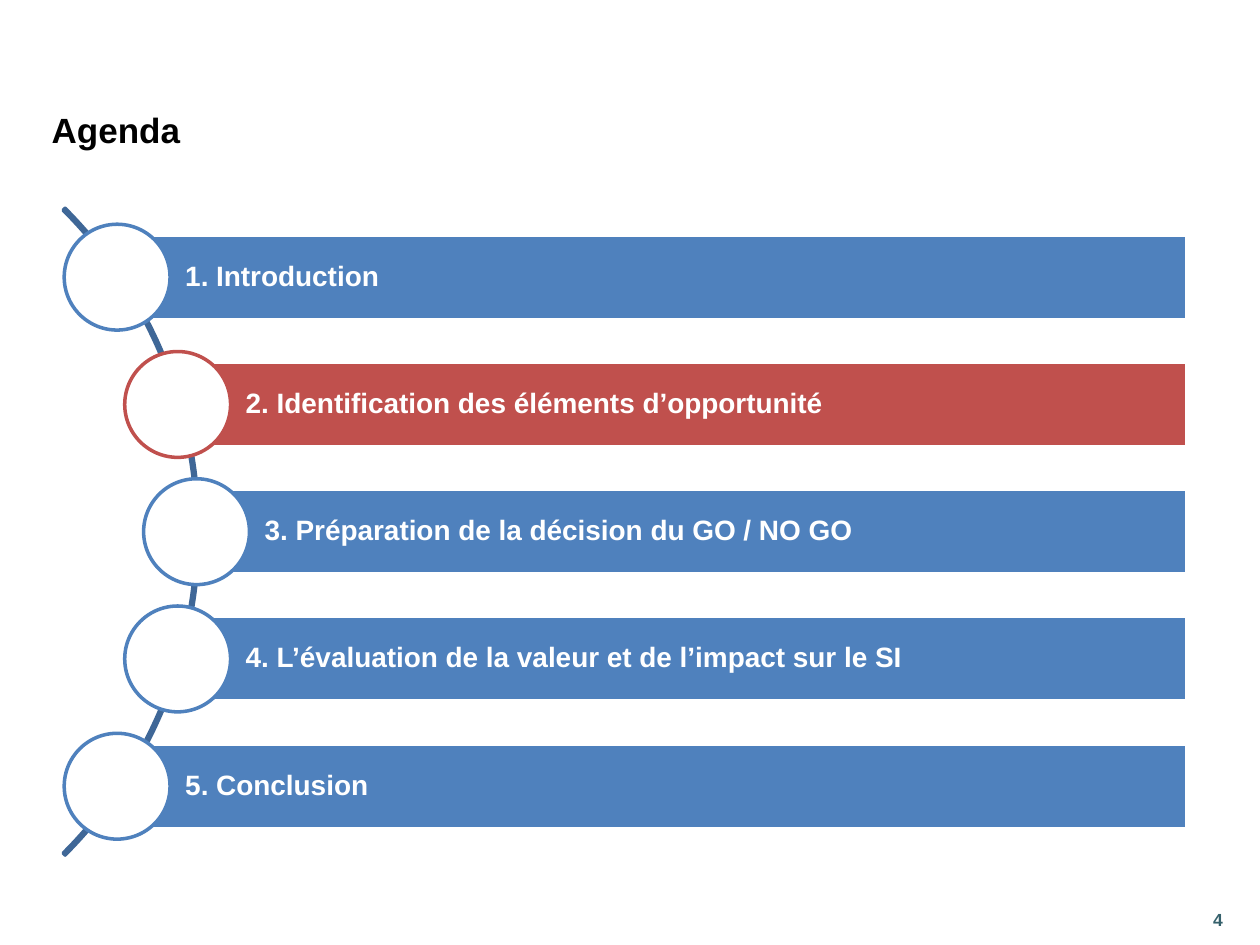
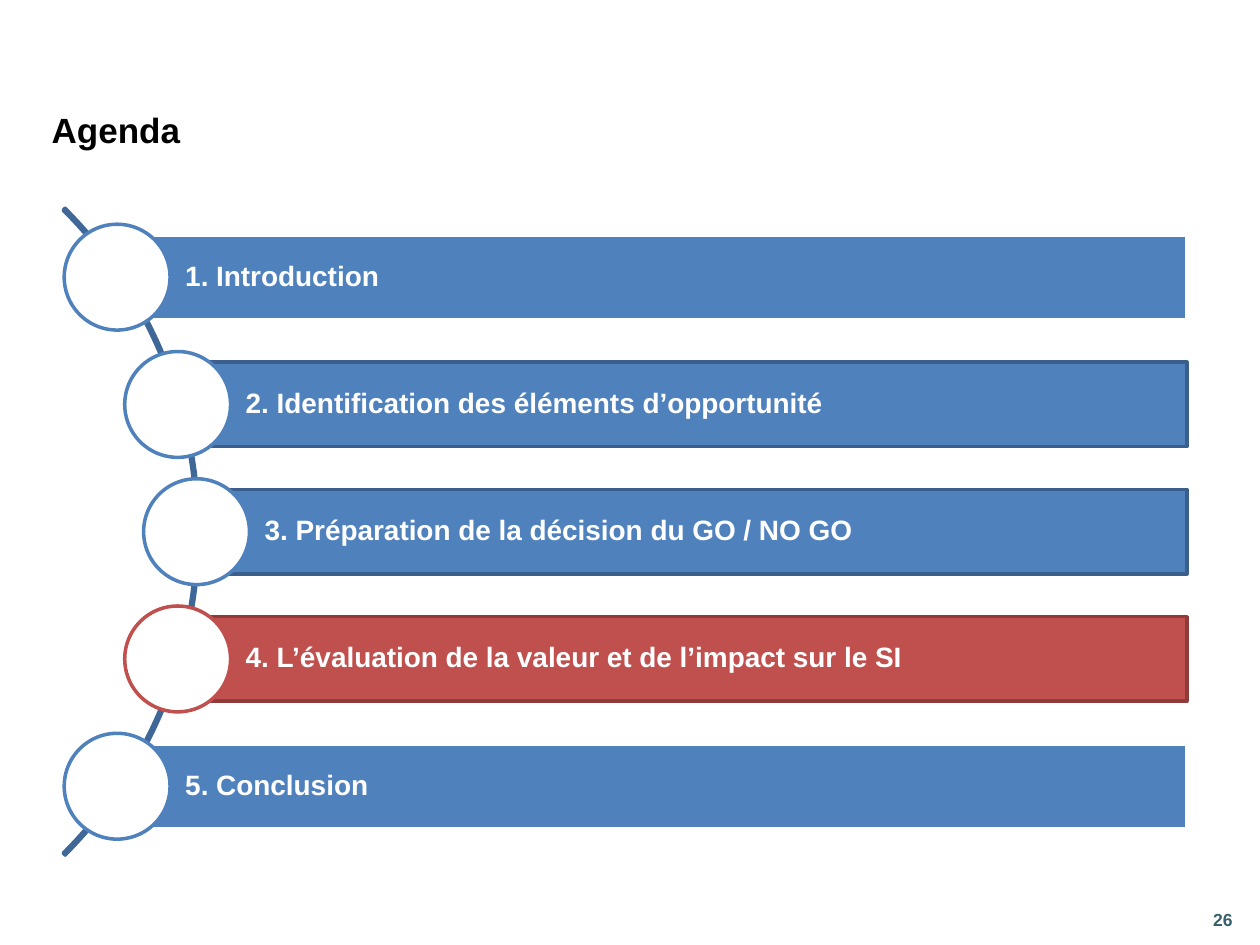
from dataclasses import dataclass

from pptx import Presentation
from pptx.dml.color import RGBColor
from pptx.enum.shapes import MSO_SHAPE
from pptx.enum.text import MSO_ANCHOR, PP_ALIGN
from pptx.util import Inches, Pt

MIDDLE = MSO_ANCHOR.MIDDLE
LEFT = PP_ALIGN.LEFT
ARC, BAR, CIRCLE = MSO_SHAPE.BLOCK_ARC, MSO_SHAPE.RECTANGLE, MSO_SHAPE.OVAL


@dataclass(frozen=True)
class Theme:
    font: str = "Arial"
    black: str = "000000"
    white: str = "FFFFFF"
    blue: str = "4F81BD"
    dark_blue: str = "3A5F8C"
    red: str = "C0504D"
    dark_red: str = "8E3B39"
    arc: str = "3F6797"
    number: str = "36616C"
    title_size: int = 20
    item_size: int = 16
    number_size: int = 10
    line_width: int = 2


THEME = Theme()


def write_text(box, text, size, color, insets=(0.1, 0.05, 0.1, 0.05), spacing=1.0):
    """Put one bold, left-aligned, vertically centred line in a box."""
    frame = box.text_frame
    frame.word_wrap = True
    frame.vertical_anchor = MIDDLE
    frame.margin_left, frame.margin_top, frame.margin_right, frame.margin_bottom = (
        Inches(inset) for inset in insets)
    para = frame.paragraphs[0]
    para.alignment = LEFT
    para.line_spacing = spacing
    span = para.add_run()
    span.text = text
    span.font.name = THEME.font
    span.font.size = Pt(size)
    span.font.bold = True
    span.font.color.rgb = RGBColor.from_string(color)


def add_outlined(page, kind, left, top, width, height, line, fill=None):
    """Add a preset shape with an outline and an optional fill."""
    shape = page.shapes.add_shape(
        kind, Inches(left), Inches(top), Inches(width), Inches(height))
    shape.shadow.inherit = False
    if fill:
        shape.fill.solid()
        shape.fill.fore_color.rgb = RGBColor.from_string(fill)
    else:
        shape.fill.background()
    shape.line.color.rgb = RGBColor.from_string(line)
    shape.line.width = Pt(THEME.line_width)
    return shape


# Agenda entries, each with the x position of its circle's centre
AGENDA = [
    ("1. Introduction", 0.93),
    ("2. Identification des éléments d’opportunité", 1.41),
    ("3. Préparation de la décision du GO / NO GO", 1.56),
    ("4. L’évaluation de la valeur et de l’impact sur le SI", 1.41),
    ("5. Conclusion", 0.93),
]

# Page number, current entry and entries with a dark outline
PAGES = [
    ("4", 1, ()),
    ("26", 3, (1, 2, 3)),
]

CENTRE_Y, PITCH = 4.22, 1.01
ARC_LEFT, ARC_SIZE = -5.68, 7.26
BAR_RIGHT, BAR_HEIGHT = 9.42, 0.67
CIRCLE_SIZE = 0.84

deck = Presentation()
deck.slide_width, deck.slide_height = Inches(10), Inches(7.5)
title_only = deck.slide_layouts[5]

# Title position shared through the layout
layout_title = title_only.placeholders[0]
layout_title.left, layout_title.top = Inches(0.31), Inches(0.78)
layout_title.width, layout_title.height = Inches(9.55), Inches(0.49)

for page_number, current, outlined in PAGES:
    page = deck.slides.add_slide(title_only)

    # Page number and title
    number_box = page.shapes.add_textbox(
        Inches(9.53), Inches(7.1), Inches(0.47), Inches(0.4))
    write_text(number_box, page_number, THEME.number_size, THEME.number)
    write_text(page.shapes.title, "Agenda", THEME.title_size, THEME.black)

    # Curve behind the agenda
    arc = add_outlined(page, ARC, ARC_LEFT, CENTRE_Y - ARC_SIZE / 2,
                       ARC_SIZE, ARC_SIZE, THEME.arc)
    for index, value in enumerate((189, 27, 0.003)):
        arc.adjustments[index] = value

    # Bars with their circles
    for index, (label, centre_x) in enumerate(AGENDA):
        centre_y = CENTRE_Y + (index - len(AGENDA) // 2) * PITCH
        is_current = index == current
        color = THEME.red if is_current else THEME.blue
        edge = THEME.white
        if index in outlined:
            edge = THEME.dark_red if is_current else THEME.dark_blue

        bar = add_outlined(page, BAR, centre_x, centre_y - BAR_HEIGHT / 2,
                           BAR_RIGHT - centre_x, BAR_HEIGHT, edge, fill=color)
        write_text(bar, label, THEME.item_size, THEME.white,
                   insets=(0.54, 0.04, 0.04, 0.04), spacing=0.9)
        add_outlined(page, CIRCLE, centre_x - CIRCLE_SIZE / 2,
                     centre_y - CIRCLE_SIZE / 2, CIRCLE_SIZE, CIRCLE_SIZE,
                     color, fill=THEME.white)

deck.save("out.pptx")
